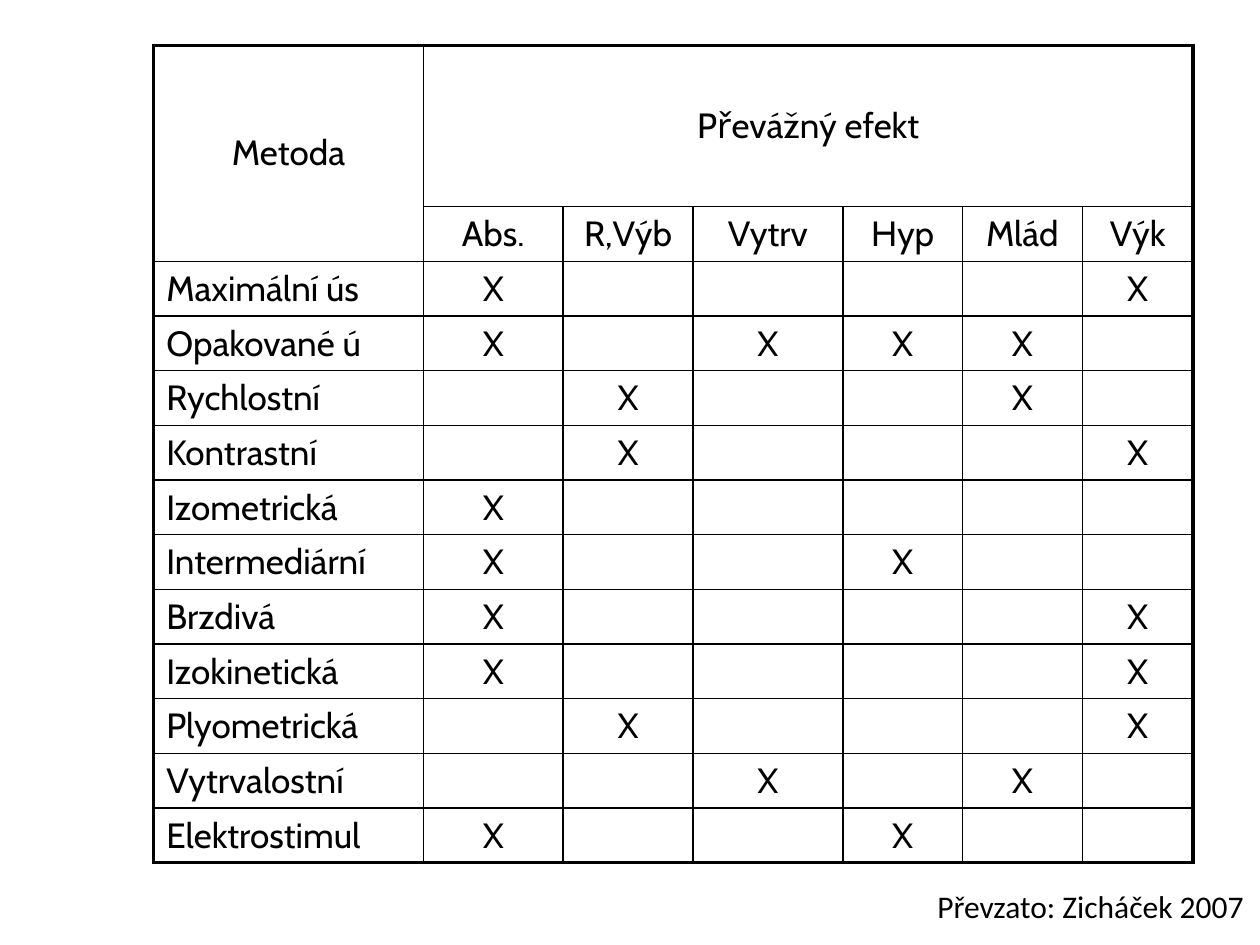
from lxml.etree import SubElement
from pptx import Presentation
from pptx.dml.color import RGBColor
from pptx.enum.text import MSO_ANCHOR, PP_ALIGN
from pptx.oxml.ns import qn
from pptx.util import Inches, Pt

# Content: each method with the effects it mainly develops
CORNER, GROUP = "Metoda", "Převážný efekt"
EFFECTS = ["Abs.", "R,Výb", "Vytrv", "Hyp", "Mlád", "Výk"]
METHODS = [
    ("Maximální ús", ["Abs.", "Výk"]),
    ("Opakované ú", ["Abs.", "Vytrv", "Hyp", "Mlád"]),
    ("Rychlostní", ["R,Výb", "Mlád"]),
    ("Kontrastní", ["R,Výb", "Výk"]),
    ("Izometrická", ["Abs."]),
    ("Intermediární", ["Abs.", "Hyp"]),
    ("Brzdivá", ["Abs.", "Výk"]),
    ("Izokinetická", ["Abs.", "Výk"]),
    ("Plyometrická", ["R,Výb", "Výk"]),
    ("Vytrvalostní", ["Vytrv", "Mlád"]),
    ("Elektrostimul", ["Abs.", "Hyp"]),
]
CREDIT = "Převzato: Zicháček 2007"

THEME = {
    "ink": "000000",
    "table": ("Cabin", 20),
    "credit": ("Calibri", 18),
    "inner": 1,
    "outer": 2.25,
}

# Layout in inches
LEFT, TOP, WIDTH, HEIGHT = 1.22, 0.36, 8.25, 6.48
COLUMN_WIDTHS = [2.14, 1.11, 1.03, 1.19, 0.95, 0.95, 0.88]
GROUP_HEIGHT = 1.28
CREDIT_LEFT, CREDIT_HEIGHT = 4.53, 0.7


def write(frame, text, style, align):
    para = frame.paragraphs[0]
    para.alignment = align
    span = para.add_run()
    span.text = text
    span.font.name, size = THEME[style]
    span.font.size = Pt(size)
    span.font.color.rgb = RGBColor.from_string(THEME["ink"])


def draw_borders(cell, edges):
    """Draw the sides in edges, a dict of side to whether it is an outer one."""
    properties = cell._tc.get_or_add_tcPr()
    lines = []
    for side, is_outer in edges.items():
        weight = THEME["outer" if is_outer else "inner"]
        line = SubElement(properties, qn(f"a:ln{side}"), w=str(Pt(weight)))
        fill = SubElement(line, qn("a:solidFill"))
        SubElement(fill, qn("a:srgbClr"), val=THEME["ink"])
        lines.append(line)
    # Borders come before the fill in the cell properties
    for position, line in enumerate(lines):
        properties.insert(position, line)


def cell_edges(cell, row, column, last_row, last_column):
    edges = {
        "L": column == 0,
        "R": column == last_column or (row == 0 and column > 0),
        "T": row == 0,
        "B": row == last_row,
    }
    if cell.is_spanned:
        # Leave out the sides that lie within a merged cell
        hidden = {"T"} if column == 0 else {"L"}
        if row == 0 and column < last_column:
            hidden.add("R")
        edges = {side: outer for side, outer in edges.items() if side not in hidden}
    return edges


def add_effect_table(page):
    rows = [[CORNER, GROUP] + [""] * (len(EFFECTS) - 1), [""] + EFFECTS]
    rows += [[name] + ["X" if effect in marked else "" for effect in EFFECTS]
             for name, marked in METHODS]
    last_row, last_column = len(rows) - 1, len(EFFECTS)

    table = page.shapes.add_table(
        len(rows), last_column + 1,
        Inches(LEFT), Inches(TOP), Inches(WIDTH), Inches(HEIGHT)).table
    table.first_row = table.horz_banding = False
    for column, width in zip(table.columns, COLUMN_WIDTHS):
        column.width = Inches(width)
    for index, row in enumerate(table.rows):
        row.height = Inches(GROUP_HEIGHT if index == 0
                            else (HEIGHT - GROUP_HEIGHT) / last_row)

    # Header cells that span rows or columns
    table.cell(0, 0).merge(table.cell(1, 0))
    table.cell(0, 1).merge(table.cell(0, last_column))

    for r, texts in enumerate(rows):
        for c, text in enumerate(texts):
            cell = table.cell(r, c)
            cell.fill.background()
            cell.vertical_anchor = MSO_ANCHOR.MIDDLE
            draw_borders(cell, cell_edges(cell, r, c, last_row, last_column))
            if text:
                is_name = c == 0 and r > 1
                write(cell.text_frame, text, "table",
                      PP_ALIGN.LEFT if is_name else PP_ALIGN.CENTER)


def add_credit(page):
    box = page.shapes.add_textbox(Inches(CREDIT_LEFT), Inches(TOP + HEIGHT),
                                  Inches(WIDTH), Inches(CREDIT_HEIGHT))
    box.text_frame.word_wrap = True
    box.text_frame.vertical_anchor = MSO_ANCHOR.MIDDLE
    write(box.text_frame, CREDIT, "credit", PP_ALIGN.CENTER)


def main():
    deck = Presentation()
    deck.slide_width, deck.slide_height = Inches(10), Inches(7.5)
    page = deck.slides.add_slide(deck.slide_layouts[6])
    add_credit(page)
    add_effect_table(page)
    deck.save("out.pptx")


if __name__ == "__main__":
    main()
